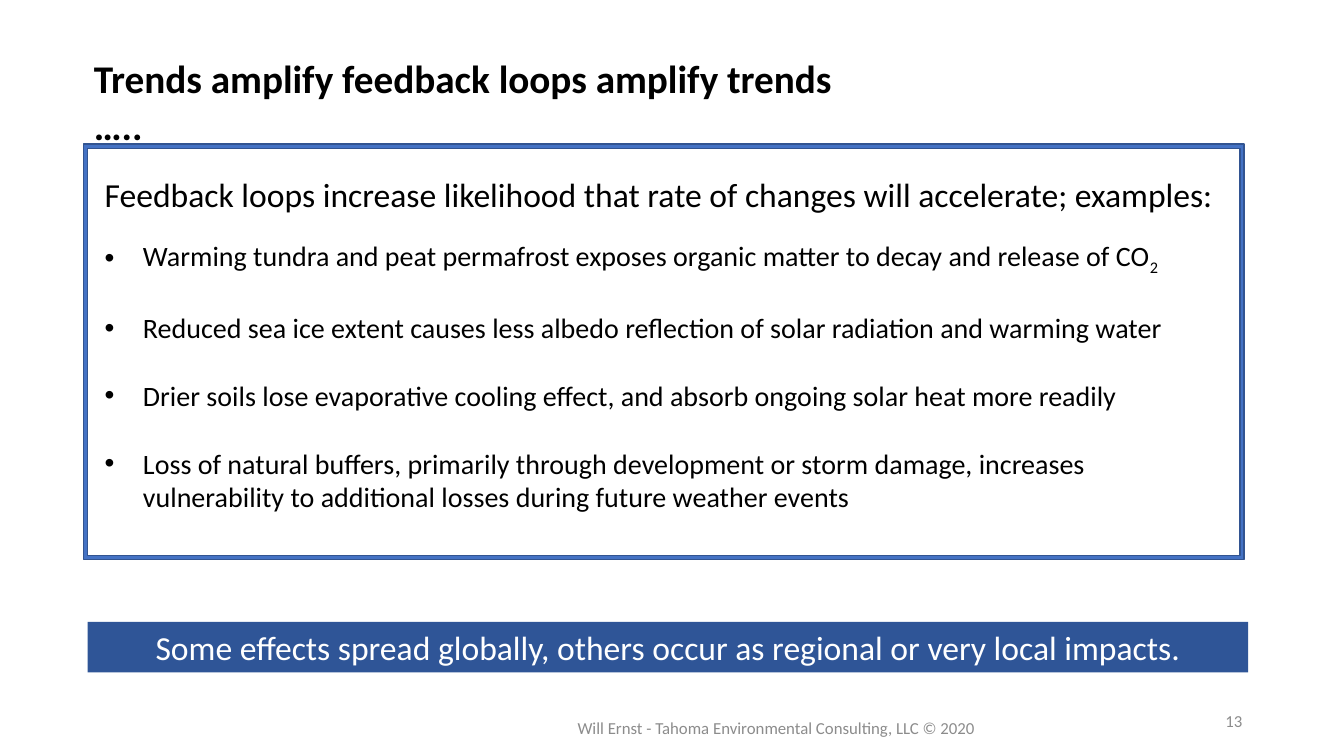
from lxml.etree import SubElement as Sub
from pptx import Presentation
from pptx.dml.color import RGBColor as RGB
from pptx.enum.shapes import MSO_SHAPE as Shape
from pptx.enum.text import MSO_ANCHOR as Anchor, PP_ALIGN as Align
from pptx.oxml.ns import qn
from pptx.util import Inches, Pt

BLACK = RGB(0x00, 0x00, 0x00)
WHITE = RGB(0xFF, 0xFF, 0xFF)
GRAY = RGB(0x8C, 0x8C, 0x8C)
BLUE = RGB(0x44, 0x72, 0xC4)
EDGE = RGB(0x32, 0x54, 0x91)
NAVY = RGB(0x2F, 0x55, 0x97)

LEAD = ("Feedback loops increase likelihood that rate of changes "
        "will accelerate; examples:")
# Each loop: its text and an optional subscript ending
LOOPS = [
    ("Warming tundra and peat permafrost exposes organic matter to decay "
     "and release of CO", "2"),
    ("Reduced sea ice extent causes less albedo reflection of solar "
     "radiation and warming water", ""),
    ("Drier soils lose evaporative cooling effect, and absorb ongoing "
     "solar heat more readily", ""),
    ("Loss of natural buffers, primarily through development or storm "
     "damage, increases vulnerability to additional losses during future "
     "weather events", ""),
]


def style(para, size, color, align=Align.LEFT, bold=False):
    para.alignment = align
    for run in para.runs:
        font = run.font
        font.name, font.size, font.bold = "Calibri", Pt(size), bold
        font.color.rgb = color


def add_box(slide, box, text, size, color, align=Align.LEFT,
            anchor=Anchor.TOP):
    frame = slide.shapes.add_textbox(*map(Inches, box)).text_frame
    frame.word_wrap = True
    frame.vertical_anchor = anchor
    frame.text = text
    style(frame.paragraphs[0], size, color, align)
    return frame


def add_shape(slide, kind, box, fill):
    shape = slide.shapes.add_shape(kind, *map(Inches, box))
    shape.shadow.inherit = False
    shape.fill.solid()
    shape.fill.fore_color.rgb = fill
    shape.line.fill.background()
    return shape


def set_title(slide, box, text):
    title = slide.shapes.title
    title.left, title.top, title.width, title.height = map(Inches, box)
    frame = title.text_frame
    frame.word_wrap = True
    frame.vertical_anchor = Anchor.TOP
    frame.text = text
    style(frame.paragraphs[0], 28, BLACK, bold=True)


def add_bullet(frame, text, sub, gap):
    para = frame.add_paragraph()
    props = para._p.get_or_add_pPr()
    props.set("marL", str(Inches(0.38)))
    props.set("indent", str(Inches(-0.38)))
    para.space_before = Pt(gap)
    Sub(props, qn("a:buFont"), typeface="Arial")
    Sub(props, qn("a:buChar"), char="•")
    para.add_run().text = text
    if sub:
        low = para.add_run()
        low.text = sub
        low._r.get_or_add_rPr().set("baseline", "-25000")
    style(para, 20, BLACK)


def main():
    deck = Presentation()
    deck.slide_width, deck.slide_height = Inches(13.33), Inches(7.5)
    slide = deck.slides.add_slide(deck.slide_layouts[5])

    # Title
    set_title(slide, (0.83, 0.49, 7.87, 0.57),
              "Trends amplify feedback loops amplify trends …..")

    # Framed list of feedback loops
    body = add_box(slide, (0.94, 1.68, 11.37, 3.77), LEAD, 24, BLACK)
    for i, (text, sub) in enumerate(LOOPS):
        add_bullet(body, text, sub, 24.4 if i else 17)
    border = add_shape(slide, Shape.FRAME, (0.83, 1.43, 11.51, 4.12), BLUE)
    border.adjustments[0] = 0.01
    border.line.color.rgb = EDGE
    border.line.width = Pt(1)

    # Closing banner
    banner = add_shape(slide, Shape.RECTANGLE, (0.87, 6.17, 11.51, 0.5), NAVY)
    banner.text_frame.word_wrap = True
    banner.text_frame.text = ("Some effects spread globally, others occur as "
                              "regional or very local impacts.")
    style(banner.text_frame.paragraphs[0], 24, WHITE, Align.CENTER)

    # Footer and page number
    foot = add_box(slide, (5.63, 7.02, 6.14, 0.4),
                   "Will Ernst - Tahoma Environmental Consulting, LLC © 2020",
                   12, GRAY, anchor=Anchor.MIDDLE)
    foot.paragraphs[0].space_after = Pt(6)
    add_box(slide, (9.42, 6.95, 3, 0.4), "13", 12, GRAY, Align.RIGHT,
            Anchor.MIDDLE)

    deck.save("out.pptx")


if __name__ == "__main__":
    main()
